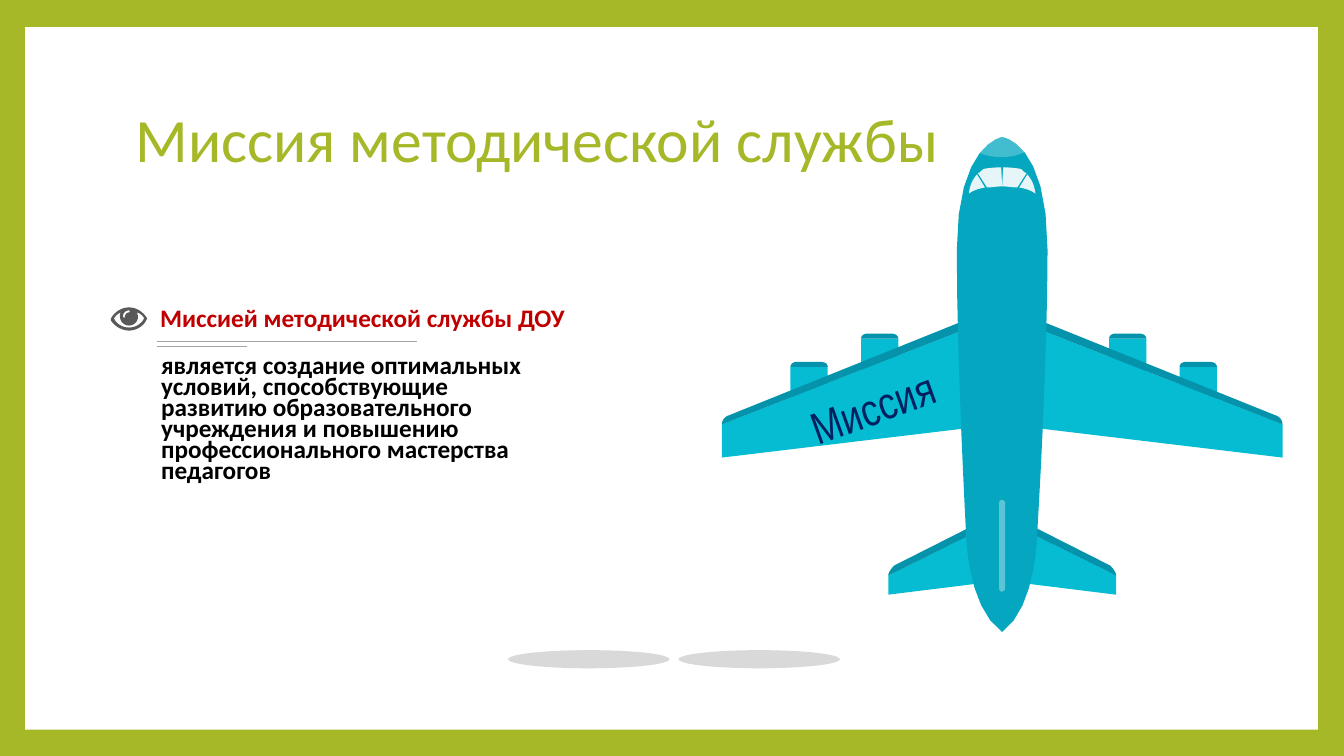
"""Builds a slide on the mission of a teaching-method service, with a plane."""
from pptx import Presentation, util as u
from pptx.dml.color import RGBColor
from pptx.enum import shapes, text
from pptx.oxml.ns import qn
from lxml import etree

GREEN = RGBColor(0xA6, 0xB7, 0x27)
WHITE = RGBColor(0xFF, 0xFF, 0xFF)
BLACK = RGBColor(0, 0, 0)
RED = RGBColor(0xC0, 0, 0)
NAVY = RGBColor(0, 0x20, 0x60)
DARK = RGBColor(0x59, 0x59, 0x59)
GREY = RGBColor(0xA6, 0xA6, 0xA6)
PALE = RGBColor(0xD9, 0xD9, 0xD9)
CYAN = RGBColor(0x06, 0xBC, 0xD2)
TEAL = RGBColor(0x04, 0x93, 0xAA)
BODY = RGBColor(0x04, 0xA7, 0xBF)
RECT = shapes.MSO_SHAPE.RECTANGLE
OVAL = shapes.MSO_SHAPE.OVAL
MID = 9.94
STEPS = 8

deck = Presentation()
deck.slide_width, deck.slide_height = u.Inches(13.33), u.Inches(7.5)
slide = deck.slides.add_slide(deck.slide_layouts[6])
slide.background.fill.solid()
slide.background.fill.fore_color.rgb = GREEN


def paint(shape, color, alpha=100):
    """Fill a shape plainly, with alpha in percent."""
    shape.shadow.inherit = False
    shape.fill.solid()
    shape.fill.fore_color.rgb = color
    shape.line.fill.background()
    if alpha < 100:
        tint = shape._element.spPr.find(".//" + qn("a:srgbClr"))
        etree.SubElement(tint, qn("a:alpha")).set("val", str(alpha * 1000))


def draw(loops, color, alpha=100, side=1):
    """Draw closed loops of points and cubic curves; side -1 mirrors at MID."""
    pen = None
    for loop in loops:
        dots = [loop[0]]
        for part in loop[1:]:
            if len(part) == 2:
                dots.append(part)
                continue
            ends = [dots[-1], part[:2], part[2:4], part[4:]]
            for step in range(1, STEPS + 1):
                t = step / STEPS
                mix = ((1 - t) ** 3, 3 * t * (1 - t) ** 2, 3 * t * t * (1 - t), t ** 3)
                dots.append(tuple(sum(m * e[i] for m, e in zip(mix, ends)) for i in (0, 1)))
        dots = [(u.Inches(MID + side * (x - MID)), u.Inches(y)) for x, y in dots]
        if pen is None:
            pen = slide.shapes.build_freeform(*dots[0], scale=1.0)
        else:
            pen.move_to(*dots[0])
        pen.add_line_segments(dots[1:], close=True)
    paint(pen.convert_to_shape(), color, alpha)


for kind, box, color in [
    (RECT, (0.25, 0.27, 12.82, 6.97), WHITE),
    (OVAL, (5.04, 6.45, 1.6, 0.18), PALE),
    (OVAL, (6.73, 6.45, 1.6, 0.18), PALE),
]:
    paint(slide.shapes.add_shape(kind, *map(u.Inches, box)), color)

eye = [
    [(1.45, 3.18), (1.42, 3.24, 1.35, 3.28, 1.28, 3.28), (1.21, 3.28, 1.14, 3.24, 1.1, 3.18),
     (1.1, 3.16), (1.14, 3.09, 1.21, 3.05, 1.28, 3.05), (1.35, 3.05, 1.42, 3.09, 1.46, 3.16)],
    [(1.36, 3.1), (1.36, 3.11, 1.37, 3.13, 1.37, 3.14), (1.37, 3.19, 1.33, 3.23, 1.28, 3.23),
     (1.23, 3.23, 1.19, 3.19, 1.19, 3.14), (1.19, 3.13, 1.19, 3.11, 1.2, 3.1),
     (1.17, 3.11, 1.15, 3.13, 1.13, 3.16), (1.16, 3.22, 1.22, 3.25, 1.28, 3.25),
     (1.34, 3.25, 1.4, 3.22, 1.43, 3.16), (1.42, 3.13, 1.39, 3.11, 1.36, 3.1)],
    [(1.28, 3.08), (1.25, 3.08, 1.22, 3.1, 1.22, 3.14), (1.22, 3.15, 1.24, 3.16, 1.24, 3.14),
     (1.24, 3.12, 1.26, 3.1, 1.28, 3.1), (1.29, 3.1, 1.29, 3.08, 1.28, 3.08)],
]
draw(eye, DARK)

for end, y in [(4.14, 3.39), (2.45, 3.44)]:
    rule = slide.shapes.add_connector(
        shapes.MSO_CONNECTOR.STRAIGHT, *map(u.Inches, (1.56, y, end, y)))
    rule.line.color.rgb = GREY
    rule.line.width = u.Pt(0.79)
    etree.SubElement(rule._element.spPr, qn("a:effectLst"))

tail = [(10.18, 5.27), (10.18, 5.79), (11.07, 5.9), (11.07, 5.71)]
tail_edge = [(11.07, 5.71), (11.07, 5.68, 11.04, 5.64, 11.01, 5.61), (10.18, 5.19), (10.18, 5.27)]
wing = [(10.34, 3.28), (10.3, 4.25), (12.72, 4.54), (12.72, 4.21)]
wing_edge = [(12.72, 4.21), (12.72, 4.17, 12.69, 4.13, 12.65, 4.12), (10.34, 3.19), (10.34, 3.28)]
hull = [(9.94, 6.27), (10.29, 6.02, 10.29, 5.25, 10.29, 5.25),
        (10.29, 5.25, 10.39, 3.62, 10.39, 2.48), (10.39, 1.4, 9.94, 1.36, 9.94, 1.36),
        (9.94, 1.36, 9.49, 1.42, 9.49, 2.48), (9.49, 3.62, 9.58, 5.25, 9.58, 5.25),
        (9.58, 5.25, 9.58, 6.02, 9.94, 6.27)]
front = [(9.95, 1.66), (9.94, 1.85), (10, 1.85, 10.04, 1.86, 10.09, 1.86), (10.18, 1.72),
         (10.16, 1.71, 10.14, 1.69, 10.13, 1.68), (10.12, 1.67, 9.99, 1.66, 9.95, 1.66)]
pane = [(10.19, 1.73), (10.11, 1.86), (10.17, 1.87, 10.23, 1.89, 10.27, 1.92),
        (10.26, 1.83, 10.23, 1.78, 10.19, 1.73)]
strip = [(9.97, 5.83), (9.97, 5.86, 9.95, 5.87, 9.94, 5.87), (9.92, 5.87, 9.91, 5.86, 9.91, 5.83),
         (9.91, 4.99), (9.91, 4.97, 9.92, 4.96, 9.94, 4.96), (9.95, 4.96, 9.97, 4.97, 9.97, 4.99)]
nose = [(9.94, 1.36), (9.94, 1.36, 9.83, 1.37, 9.72, 1.52), (9.77, 1.54, 9.85, 1.56, 9.93, 1.56),
        (10.02, 1.56, 10.1, 1.54, 10.16, 1.51), (10.04, 1.36, 9.94, 1.36, 9.94, 1.36)]

for x, y in [(11, 3.36), (11.7, 3.64), (8.54, 3.36), (7.84, 3.64)]:
    paint(slide.shapes.add_shape(RECT, *map(u.Inches, (x, y, 0.37, 0.51))), CYAN)
    top = y - 0.05
    draw([[(x, y), (x, y - 0.03, x + 0.03, top, x + 0.06, top), (x + 0.3, top),
           (x + 0.34, top, x + 0.37, y - 0.03, x + 0.37, y)]], TEAL)
for side in (-1, 1):
    for part, color in [(tail, CYAN), (tail_edge, TEAL), (wing, CYAN), (wing_edge, TEAL)]:
        draw([part], color, side=side)
draw([hull], BODY)
for side in (-1, 1):
    for part in (front, pane):
        draw([part], WHITE, 90, side)
draw([strip], WHITE, 35)
draw([nose], WHITE, 25)

for words, box, size, face, color, bold, space, turn in [
    ("Миссией методической службы ДОУ", (1.49, 2.95, 4.39, 0.4), 18, "Calibri", RED, True, 1.0, 0),
    ("является создание оптимальных условий, способствующие развитию образовательного "
     "учреждения и повышению профессионального мастерства педагогов",
     (1.5, 3.51, 4.01, 1.38), 18, "Calibri", BLACK, True, u.Pt(15), 0),
    ("Миссия", (7.91, 3.68, 1.7, 0.64), 32, "Arial Narrow", NAVY, False, 1.0, 340.1),
    ("Миссия методической службы", (1.25, 0.67, 10.8, 1.48), 44, "Calibri", GREEN, False, 0.9, 0),
]:
    area = slide.shapes.add_textbox(*map(u.Inches, box))
    area.rotation = turn
    frame = area.text_frame
    frame.word_wrap = not turn
    if size == 44:
        frame.vertical_anchor = text.MSO_ANCHOR.MIDDLE
    para = frame.paragraphs[0]
    para.line_spacing = space
    run = para.add_run()
    run.text = words
    for key, value in {"size": u.Pt(size), "name": face, "bold": bold}.items():
        setattr(run.font, key, value)
    run.font.color.rgb = color

deck.save("out.pptx")
